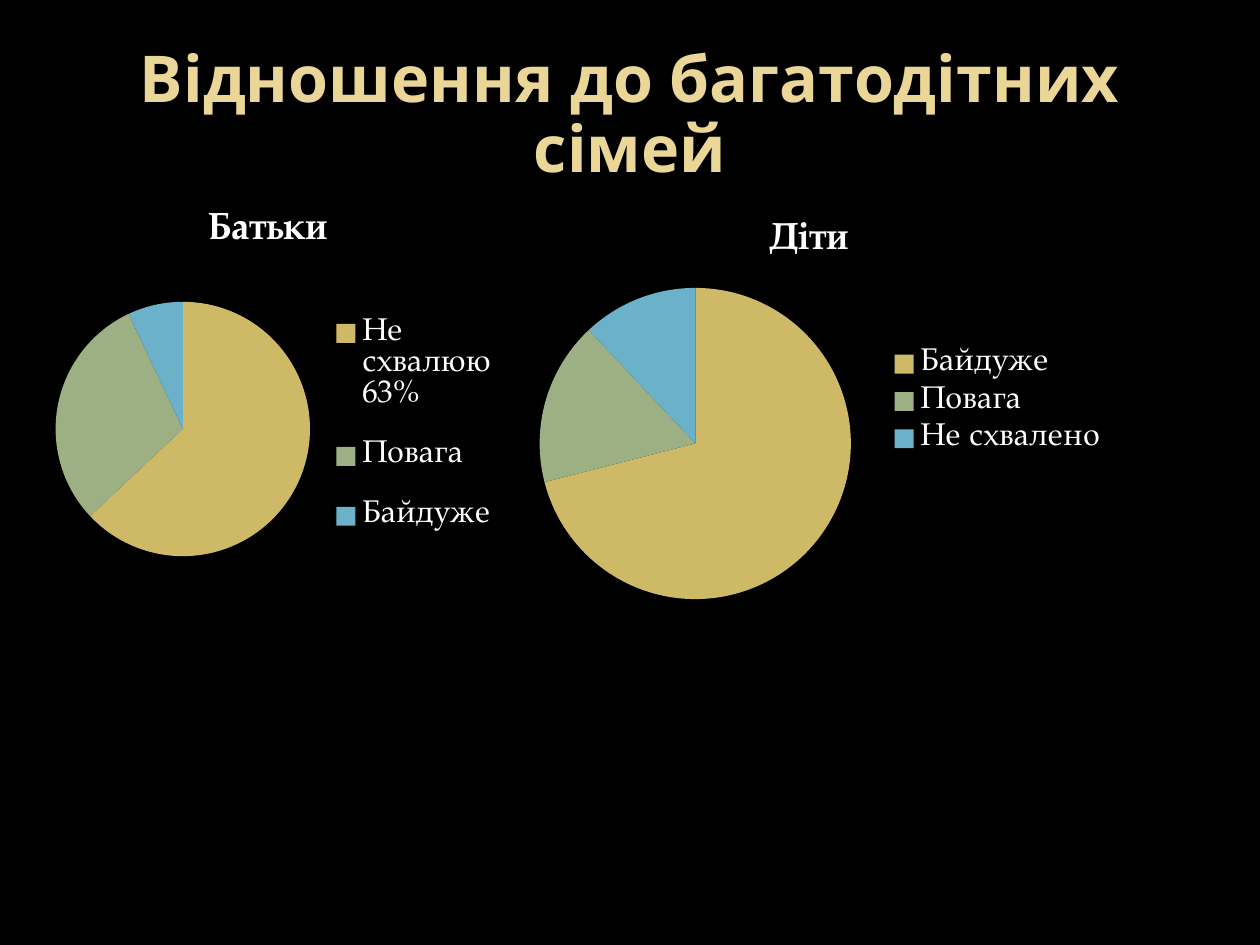
from dataclasses import dataclass

from lxml.etree import SubElement
from pptx import Presentation
from pptx.chart.data import CategoryChartData
from pptx.dml.color import RGBColor
from pptx.enum.chart import XL_CHART_TYPE as ChartType, XL_LEGEND_POSITION as LegendPosition
from pptx.enum.text import MSO_ANCHOR as Anchor, MSO_AUTO_SIZE as AutoSize, PP_ALIGN as Align
from pptx.oxml.ns import qn
from pptx.util import Cm, Pt


@dataclass(frozen=True)
class Theme:
    background: RGBColor = RGBColor.from_string("000000")
    heading: RGBColor = RGBColor.from_string("EAD696")
    text: RGBColor = RGBColor.from_string("FFFFFF")
    slices: tuple = ("CEB966", "9CB084", "6BB1C9")
    heading_font: str = "Noto Sans"
    chart_font: str = "TeX Gyre Pagella"
    heading_size: float = 36.9
    chart_title_size: float = 21.6
    legend_size: float = 18


THEME = Theme()


def style_font(font, name, size, color, bold=False):
    font.name, font.size, font.bold = name, Pt(size), bold
    font.color.rgb = color


def add_heading(slide, text):
    heading = slide.shapes.title
    heading.left, heading.top, heading.width, heading.height = (
        Cm(1.27), Cm(0.76), Cm(22.86), Cm(3.18))
    frame = heading.text_frame
    frame.word_wrap = True
    frame.auto_size = AutoSize.NONE
    frame.vertical_anchor = Anchor.MIDDLE
    paragraph = frame.paragraphs[0]
    paragraph.alignment = Align.CENTER
    paragraph.line_spacing = 0.9
    run = paragraph.add_run()
    run.text = text
    style_font(run.font, THEME.heading_font, THEME.heading_size, THEME.heading, bold=True)


def place_inside(part, box, inner=False):
    """Fix a chart part at x, y, w, h, given as fractions of the chart."""
    layout = part.find(qn("c:layout"))
    if layout is None:
        layout = SubElement(part, qn("c:layout"))
        # The schema wants the layout first, or right after the legend position
        part.insert(0 if inner else 1, layout)
    for child in list(layout):
        layout.remove(child)
    manual = SubElement(layout, qn("c:manualLayout"))
    settings = [("layoutTarget", "inner")] if inner else []
    settings += [("xMode", "edge"), ("yMode", "edge"), *zip("xywh", box)]
    for tag, value in settings:
        SubElement(manual, qn(f"c:{tag}"), val=str(value))


def add_pie(slide, group, answers, frame, pie_box, legend_box):
    data = CategoryChartData()
    data.categories = list(answers)
    data.add_series(group, list(answers.values()))
    chart = slide.shapes.add_chart(ChartType.PIE, *map(Cm, frame), data).chart
    style_font(chart.font, THEME.chart_font, THEME.legend_size, THEME.text)

    # Group name above the pie
    chart.has_title = True
    run = chart.chart_title.text_frame.paragraphs[0].add_run()
    run.text = group
    style_font(run.font, THEME.chart_font, THEME.chart_title_size, THEME.text, bold=True)

    # Legend of answers
    chart.has_legend = True
    legend = chart.legend
    legend.position = LegendPosition.RIGHT
    legend.include_in_layout = False
    style_font(legend.font, THEME.chart_font, THEME.legend_size, THEME.text)

    # Slices
    plot = chart.plots[0]
    plot.vary_by_categories = True
    for index, color in enumerate(THEME.slices):
        slice_format = plot.series[0].points[index].format
        slice_format.fill.solid()
        slice_format.fill.fore_color.rgb = RGBColor.from_string(color)
        slice_format.line.fill.background()

    plot_area = chart.element.find(f".//{qn('c:plotArea')}")
    place_inside(plot_area, pie_box, inner=True)
    place_inside(chart.element.find(f".//{qn('c:legend')}"), legend_box)


def main():
    deck = Presentation()
    deck.slide_width, deck.slide_height = Cm(25.4), Cm(19.05)
    slide = deck.slides.add_slide(deck.slide_layouts[5])
    slide.background.fill.solid()
    slide.background.fill.fore_color.rgb = THEME.background

    add_heading(slide, "Відношення до багатодітних сімей")

    # Parents on the left, children on the right
    add_pie(slide, "Батьки ", {"Не схвалюю 63%": 63, "Повага": 30, "Байдуже": 7},
            frame=(0.71, 3.73, 9.6, 8.41),
            pie_box=(0.04, 0.28, 0.54, 0.61), legend_box=(0.61, 0.25, 0.37, 0.65))
    add_pie(slide, "Діти ", {"Байдуже": 71, "Повага": 17, "Не схвалено ": 12},
            frame=(10.11, 3.94, 12.6, 8.48),
            pie_box=(0.06, 0.22, 0.5, 0.74), legend_box=(0.62, 0.35, 0.36, 0.28))

    deck.save("out.pptx")


if __name__ == "__main__":
    main()
